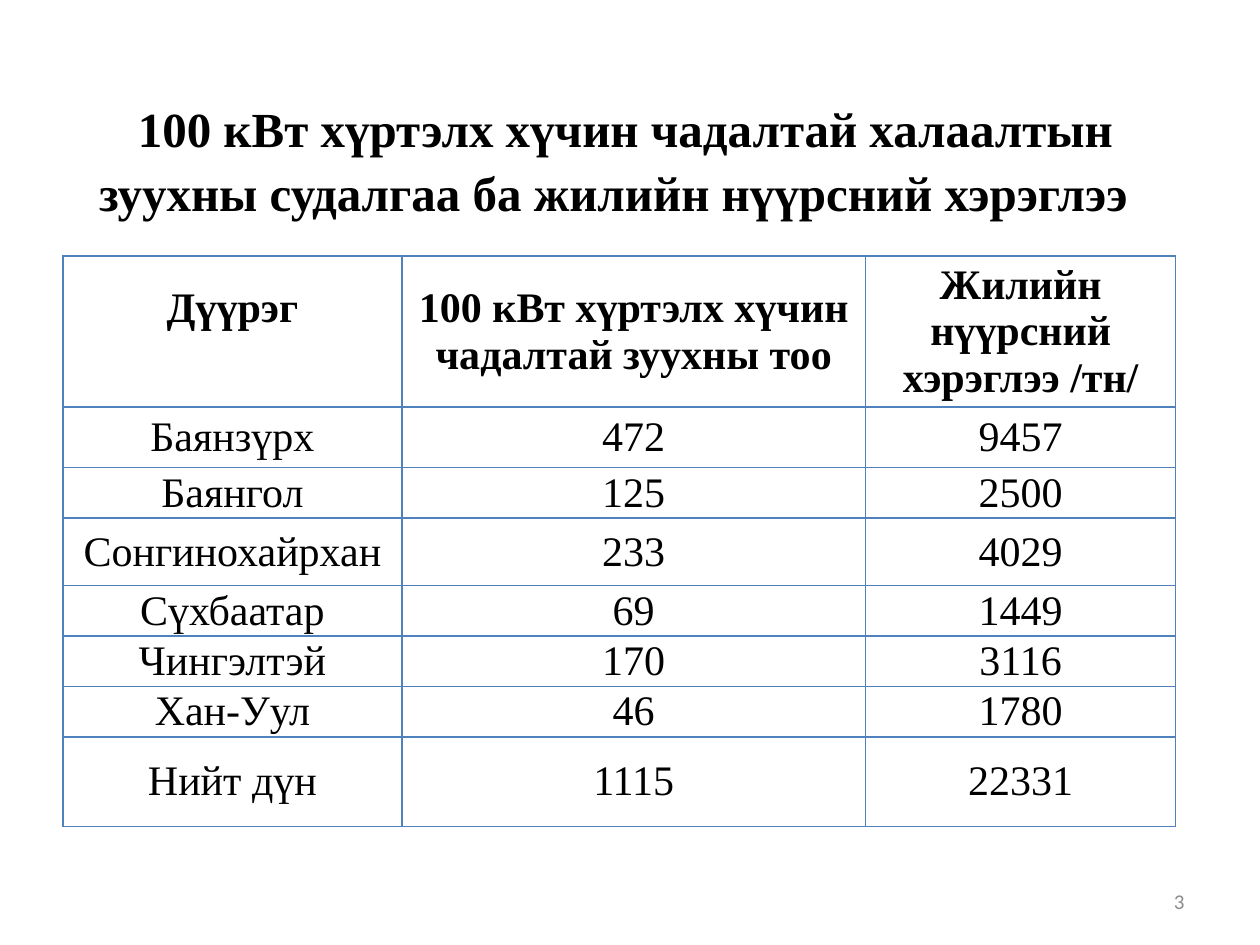
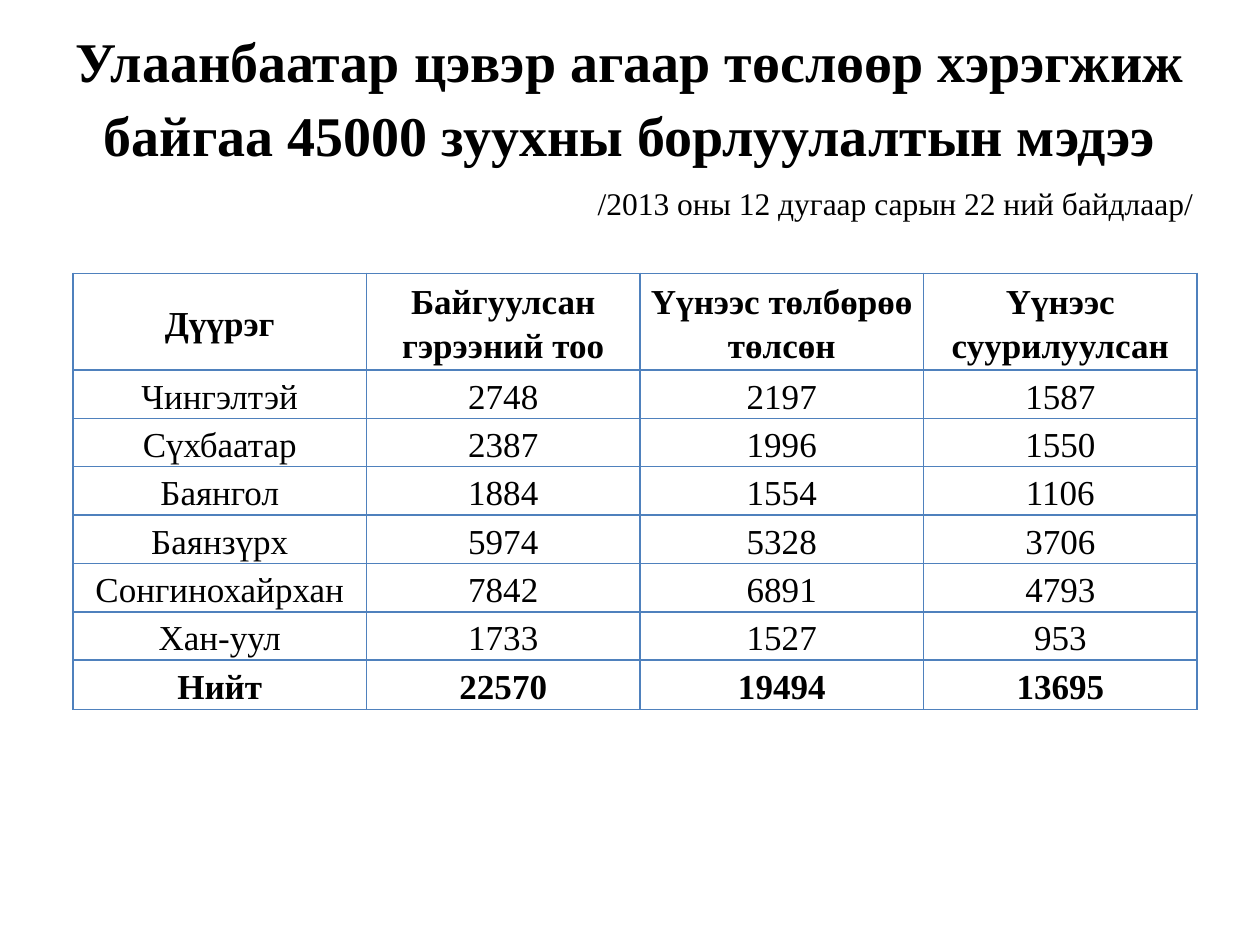
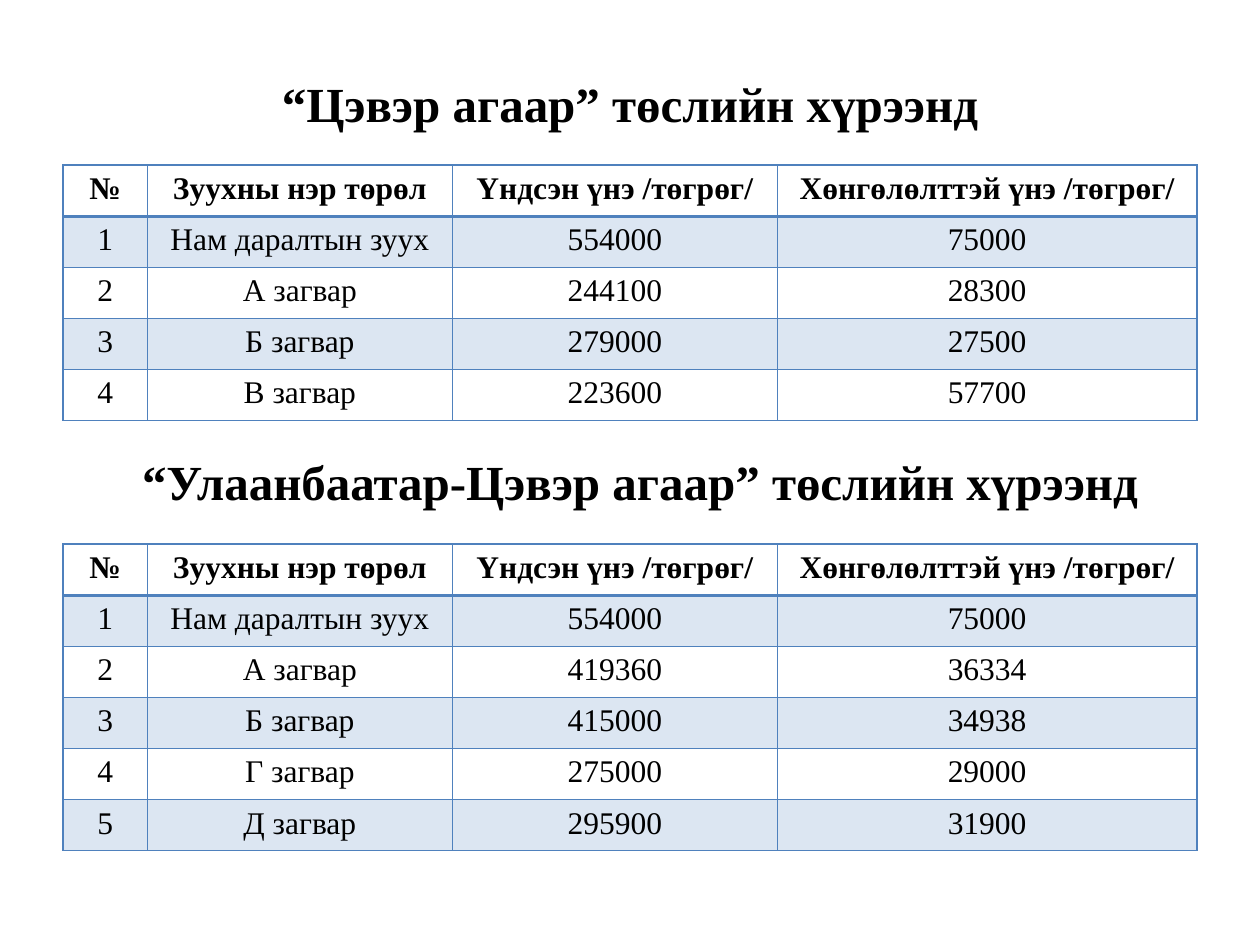
from dataclasses import dataclass, field

import lxml.etree
import pptx
import pptx.dml.color
import pptx.enum.text
import pptx.oxml.ns
import pptx.slide
import pptx.table
import pptx.util

Cm = pptx.util.Cm
Pt = pptx.util.Pt
Align = pptx.enum.text.PP_ALIGN
Middle = pptx.enum.text.MSO_ANCHOR.MIDDLE
Top = pptx.enum.text.MSO_ANCHOR.TOP

# Shared look
COLORS = {"ink": "000000", "line": "4F81BD", "band": "DCE6F2", "page": "8C8C8C"}
SERIF = "Times New Roman"
TITLE = {"name": SERIF, "size": Pt(28), "bold": True}
LARGE = TITLE | {"size": Pt(32)}
NOTE = {"name": SERIF, "size": Pt(18), "bold": False}
PAGE = {"name": "Calibri", "size": Pt(12), "bold": False}
TIGHT = {"vertical_anchor": Middle, "margin_left": Cm(0.17), "margin_right": Cm(0.17),
         "margin_top": 0, "margin_bottom": 0}
LOOSE = {"vertical_anchor": Top}
PLAIN = {"first_row": False, "horz_banding": False}


@dataclass
class Label:
    text: str
    left: float
    top: float
    width: float
    height: float
    font: dict = field(default_factory=lambda: TITLE)
    align: Align = Align.CENTER
    color: str = "ink"
    leading: float = 1.0


@dataclass
class Grid:
    left: float
    top: float
    widths: list[float]
    heights: list[float]
    rows: list[tuple]
    size: int
    cell: dict = field(default_factory=lambda: TIGHT)
    leading: float = 1.0
    rule: float = 1  # line under the header, in points
    banded: bool = False
    total: bool = False


def apply(target: object, values: dict) -> None:
    for name, value in values.items():
        setattr(target, name, value)


def rgb(color: str) -> pptx.dml.color.RGBColor:
    return pptx.dml.color.RGBColor.from_string(COLORS[color])


def write(frame: pptx.text.text.TextFrame, text: str, font: dict,
          align: Align, color: str, leading: float) -> None:
    para = frame.paragraphs[0]
    apply(para, {"alignment": align, "line_spacing": leading})
    run = para.add_run()
    run.text = text
    apply(run.font, font)
    run.font.color.rgb = rgb(color)


def add_label(slide: pptx.slide.Slide, label: Label) -> None:
    box = slide.shapes.add_textbox(Cm(label.left), Cm(label.top),
                                   Cm(label.width), Cm(label.height))
    apply(box.text_frame, {"word_wrap": True, "vertical_anchor": Middle})
    write(box.text_frame, label.text, label.font, label.align, label.color, label.leading)


def add_edges(cell: pptx.table._Cell, above: float, below: float) -> None:
    props = cell._tc.get_or_add_tcPr()
    qn = pptx.oxml.ns.qn
    sides = {"lnL": 1, "lnR": 1, "lnT": above, "lnB": below}
    for spot, (tag, width) in enumerate(sides.items()):
        edge = lxml.etree.Element(qn(f"a:{tag}"), w=str(Pt(width)))
        fill = lxml.etree.SubElement(edge, qn("a:solidFill"))
        lxml.etree.SubElement(fill, qn("a:srgbClr"), val=COLORS["line"])
        props.insert(spot, edge)


def add_grid(slide: pptx.slide.Slide, grid: Grid) -> pptx.table.Table:
    frame = slide.shapes.add_table(len(grid.rows), len(grid.widths),
                                   Cm(grid.left), Cm(grid.top),
                                   Cm(sum(grid.widths)), Cm(sum(grid.heights)))
    table = frame.table
    apply(table, PLAIN)
    for column, width in zip(table.columns, grid.widths):
        column.width = Cm(width)
    for row, height in zip(table.rows, grid.heights):
        row.height = Cm(height)
    last = len(grid.rows) - 1
    for r, values in enumerate(grid.rows):
        bold = r == 0 or (grid.total and r == last)
        font = {"name": SERIF, "size": Pt(grid.size), "bold": bold}
        for c, value in enumerate(values):
            cell = table.cell(r, c)
            apply(cell, grid.cell)
            if grid.banded and r % 2:
                cell.fill.solid()
                cell.fill.fore_color.rgb = rgb("band")
            else:
                cell.fill.background()
            add_edges(cell, grid.rule if r == 1 else 1, grid.rule if r == 0 else 1)
            write(cell.text_frame, str(value), font, Align.CENTER, "ink", grid.leading)
    return table


def price_grid(top: float, stoves: list[tuple]) -> Grid:
    head = ("№", "Зуухны нэр төрөл", "Үндсэн үнэ /төгрөг/", "Хөнгөлөлттэй үнэ /төгрөг/")
    rows = [head] + [(n, *stove) for n, stove in enumerate(stoves, 1)]
    return Grid(1.27, top, [1.7, 6.15, 6.55, 8.46], [1.03] * len(rows), rows, 18,
                cell=LOOSE, rule=2, banded=True)


# Content
BOILERS = Grid(
    1.27, 5.16, [6.83, 9.35, 6.25], [2.8, 1.22, 0.94, 1.36, 0.94, 0.94, 0.94, 1.8],
    [("Дүүрэг", "100 кВт хүртэлх хүчин чадалтай зуухны тоо", "Жилийн нүүрсний хэрэглээ /тн/"),
     ("Баянзүрх", 472, 9457),
     ("Баянгол", 125, 2500),
     ("Сонгинохайрхан", 233, 4029),
     ("Сүхбаатар", 69, 1449),
     ("Чингэлтэй", 170, 3116),
     ("Хан-Уул", 46, 1780),
     ("Нийт дүн", 1115, 22331)], 24)

SALES = Grid(
    1.47, 5.51, [5.92, 5.51, 5.72, 5.51], [1.8] + [0.9] * 6 + [0.99],
    [("Дүүрэг", "Байгуулсан гэрээний тоо", "Үүнээс төлбөрөө төлсөн", "Үүнээс суурилуулсан"),
     ("Чингэлтэй", 2748, 2197, 1587),
     ("Сүхбаатар", 2387, 1996, 1550),
     ("Баянгол", 1884, 1554, 1106),
     ("Баянзүрх", 5974, 5328, 3706),
     ("Сонгинохайрхан", 7842, 6891, 4793),
     ("Хан-уул", 1733, 1527, 953),
     ("Нийт", 22570, 19494, 13695)], 20, leading=1.15, total=True)

CLEAN = price_grid(3.33, [
    ("Нам даралтын зуух", 554000, 75000),
    ("А загвар", 244100, 28300),
    ("Б загвар", 279000, 27500),
    ("В загвар", 223600, 57700)])

CITY = price_grid(10.97, [
    ("Нам даралтын зуух", 554000, 75000),
    ("А загвар", 419360, 36334),
    ("Б загвар", 415000, 34938),
    ("Г загвар", 275000, 29000),
    ("Д загвар", 295900, 31900)])


def main() -> None:
    deck = pptx.Presentation()
    apply(deck, {"slide_width": Cm(25.4), "slide_height": Cm(19.05)})
    first, second, third = (deck.slides.add_slide(deck.slide_layouts[6]) for _ in range(3))

    # Boilers by district
    add_label(first, Label("3", 18.21, 17.65, 5.92, 1.02, PAGE, Align.RIGHT, "page"))
    table = add_grid(first, BOILERS)
    table.cell(0, 0).margin_bottom = Cm(0.94)  # lifts the heading by half a line
    add_label(first, Label(
        " 100 кВт хүртэлх хүчин чадалтай халаалтын зуухны судалгаа ба жилийн нүүрсний хэрэглээ ",
        1.27, 2.18, 22.43, 1.98, leading=1.09))

    # Stove sales
    add_label(second, Label(
        "Улаанбаатар цэвэр агаар төслөөр хэрэгжиж байгаа 45000 зуухны борлуулалтын мэдээ",
        0.64, 0.65, 24.13, 2.5, LARGE, leading=1.09))
    add_label(second, Label("/2013 оны 12 дугаар сарын 22 ний байдлаар/",
                            11.31, 3.6, 13, 1, NOTE, Align.RIGHT))
    add_grid(second, SALES)

    # Stove prices
    add_grid(third, CLEAN)
    add_label(third, Label("“Цэвэр агаар” төслийн хүрээнд", 1.27, 1.6, 22.86, 0.94))
    add_label(third, Label("“Улаанбаатар-Цэвэр агаар” төслийн хүрээнд", 1.47, 9.22, 22.86, 0.94))
    add_grid(third, CITY)

    deck.save("out.pptx")


if __name__ == "__main__":
    main()
